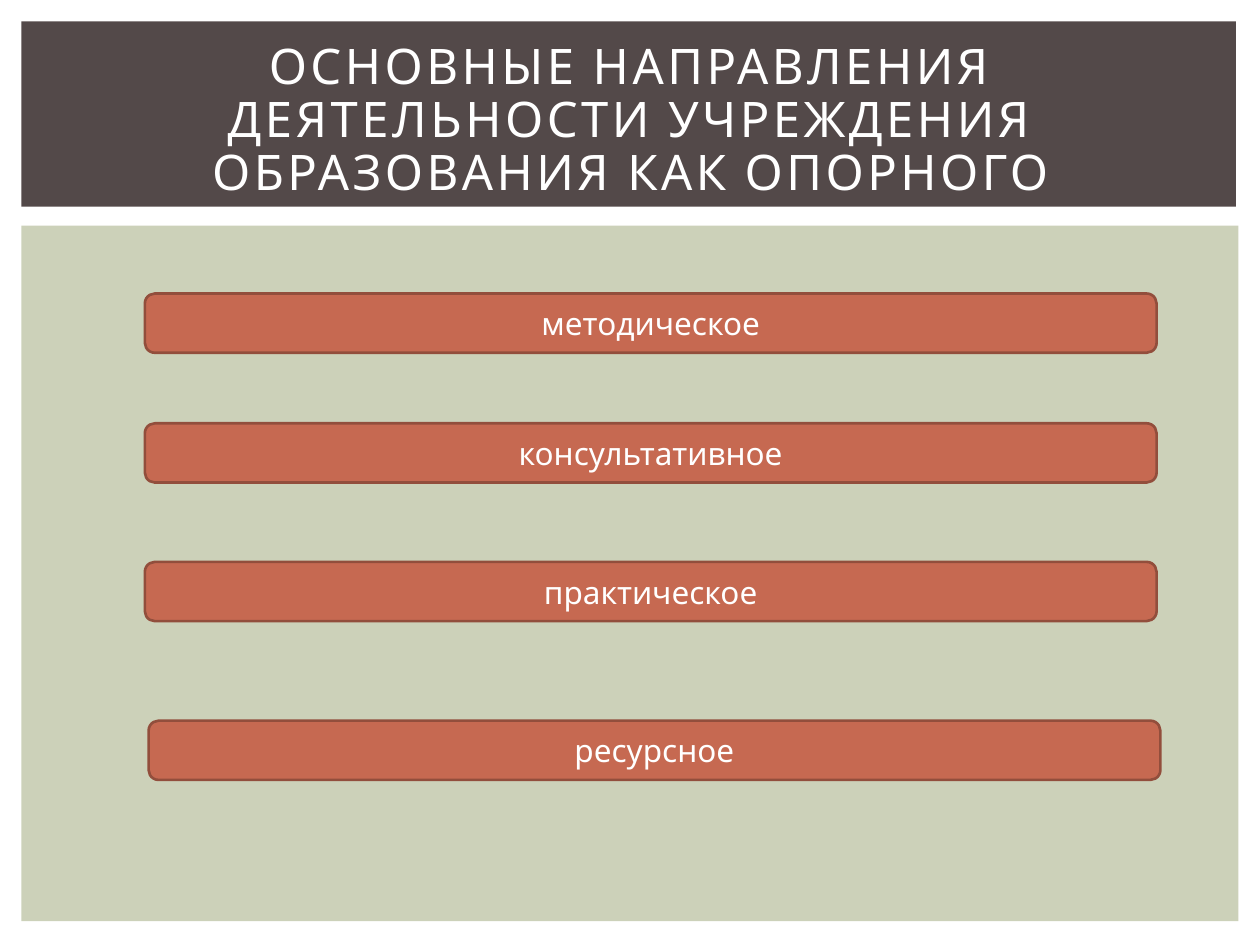
from pptx import Presentation
from pptx.dml.color import RGBColor as Rgb
from pptx.enum.shapes import MSO_SHAPE as Kind
from pptx.enum.text import MSO_ANCHOR as Anchor, MSO_AUTO_SIZE as Fit, PP_ALIGN as Align
from pptx.util import Inches, Pt

WIDTH, HEIGHT = 10, 7.5
COLS, ROWS = 100, 75


def tint(code):
    """Turn a hex string into a colour."""
    return Rgb.from_string(code)


class Deck:
    """Hold the style and the current slide."""

    font = "Karla"
    white, brown, sage = "FFFFFF", "534949", "CCD1B9"
    clay, rust = "C66951", "924E3C"

    def __init__(self):
        """Open a deck with one title-only slide."""
        self.prs = Presentation()
        self.prs.slide_width, self.prs.slide_height = Inches(WIDTH), Inches(HEIGHT)
        self.slide = self.prs.slides.add_slide(self.prs.slide_layouts[5])
        fill = self.slide.background.fill
        fill.solid()
        fill.fore_color.rgb = tint(self.white)

    def place(self, col, row, wide, high):
        """Turn grid units into lengths on the slide."""
        across, down = Inches(WIDTH) / COLS, Inches(HEIGHT) / ROWS
        return [round(n) for n in (col * across, row * down, wide * across, high * down)]

    def label(self, shape, text, size):
        """Put centred white text in a shape and return its run."""
        frame = shape.text_frame
        frame.text = text
        frame.word_wrap = True
        frame.auto_size = Fit.NONE
        frame.vertical_anchor = Anchor.MIDDLE
        par = frame.paragraphs[0]
        par.alignment = Align.CENTER
        run = par.runs[0]
        run.font.name, run.font.size = self.font, Pt(size)
        run.font.color.rgb = tint(self.white)
        return run

    def block(self, kind, area, color):
        """Draw a filled shape without line or shadow."""
        shape = self.slide.shapes.add_shape(kind, *self.place(*area))
        shape.shadow.inherit = False
        shape.fill.solid()
        shape.fill.fore_color.rgb = tint(color)
        shape.line.fill.background()
        return shape

    def panel(self, area, color):
        """Draw a plain background panel."""
        self.block(Kind.RECTANGLE, area, color)

    def title(self, area, text):
        """Set the title above the panels."""
        head = self.slide.shapes.title
        head.left, head.top, head.width, head.height = self.place(*area)
        run = self.label(head, text, 28)
        run.font._element.set("spc", "200")
        head.text_frame.paragraphs[0].line_spacing = 0.9
        self.slide.shapes._spTree.append(head._element)

    def bar(self, area, text):
        """Draw a rounded bar with a label."""
        shape = self.block(Kind.ROUNDED_RECTANGLE, area, self.clay)
        shape.line.color.rgb = tint(self.rust)
        shape.line.width = Pt(1.5)
        self.label(shape, text, 18)


def main():
    """Build the slide and save it."""
    deck = Deck()
    deck.panel((1.7, 17.9, 96.6, 55.2), deck.sage)
    deck.panel((1.7, 1.7, 96.4, 14.7), deck.brown)
    deck.title((4.2, 3.9, 91.7, 11.5),
               "ОСНОВНЫЕ НАПРАВЛЕНИЯ ДЕЯТЕЛЬНОСТИ УЧРЕЖДЕНИЯ ОБРАЗОВАНИЯ КАК ОПОРНОГО")
    bars = (
        (11.5, 23.3, "методическое"),
        (11.5, 33.6, "консультативное"),
        (11.5, 44.6, "практическое"),
        (11.8, 57.2, "ресурсное"),
    )
    for col, row, text in bars:
        deck.bar((col, row, 80.3, 4.7), text)
    deck.prs.save("out.pptx")


if __name__ == "__main__":
    main()
